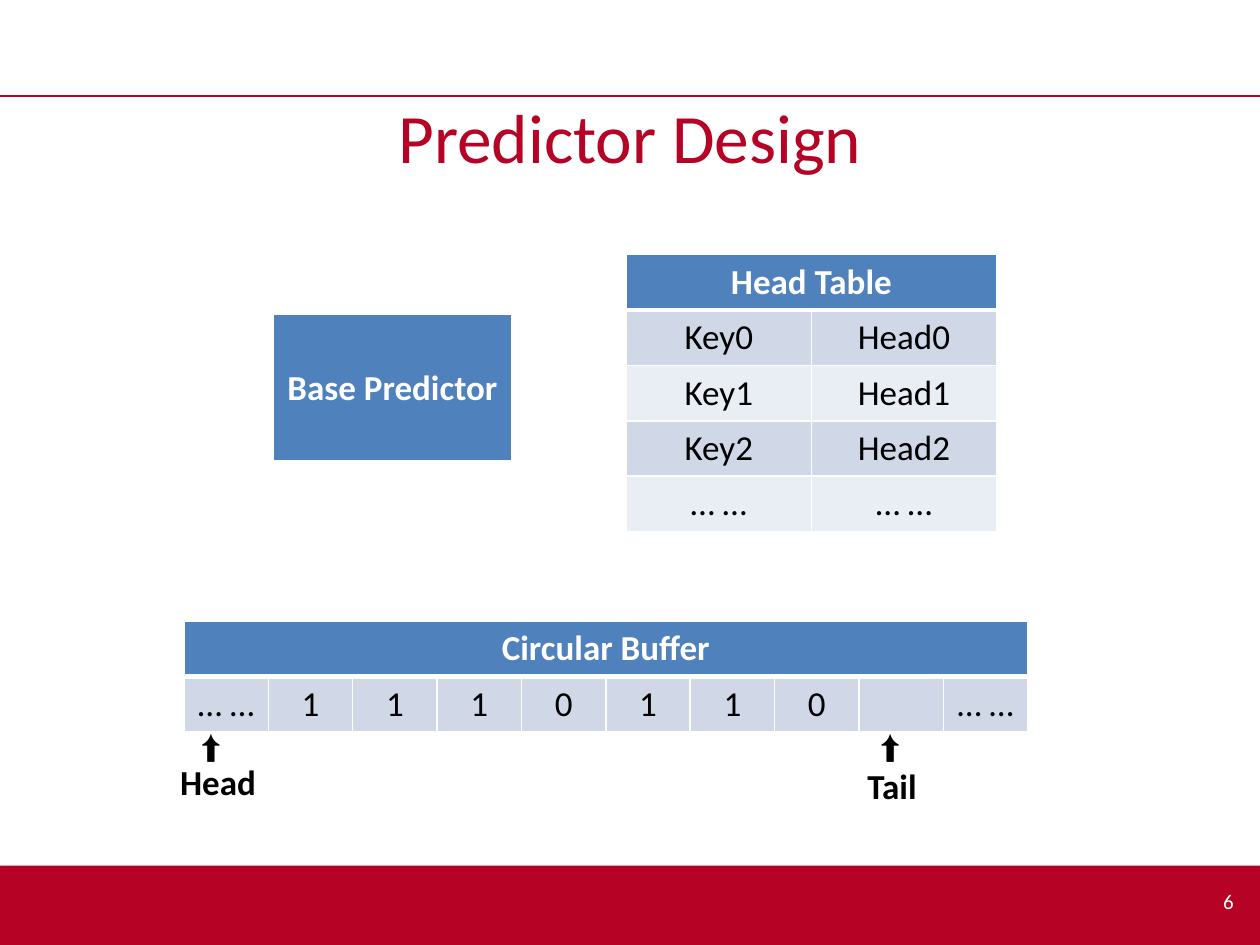
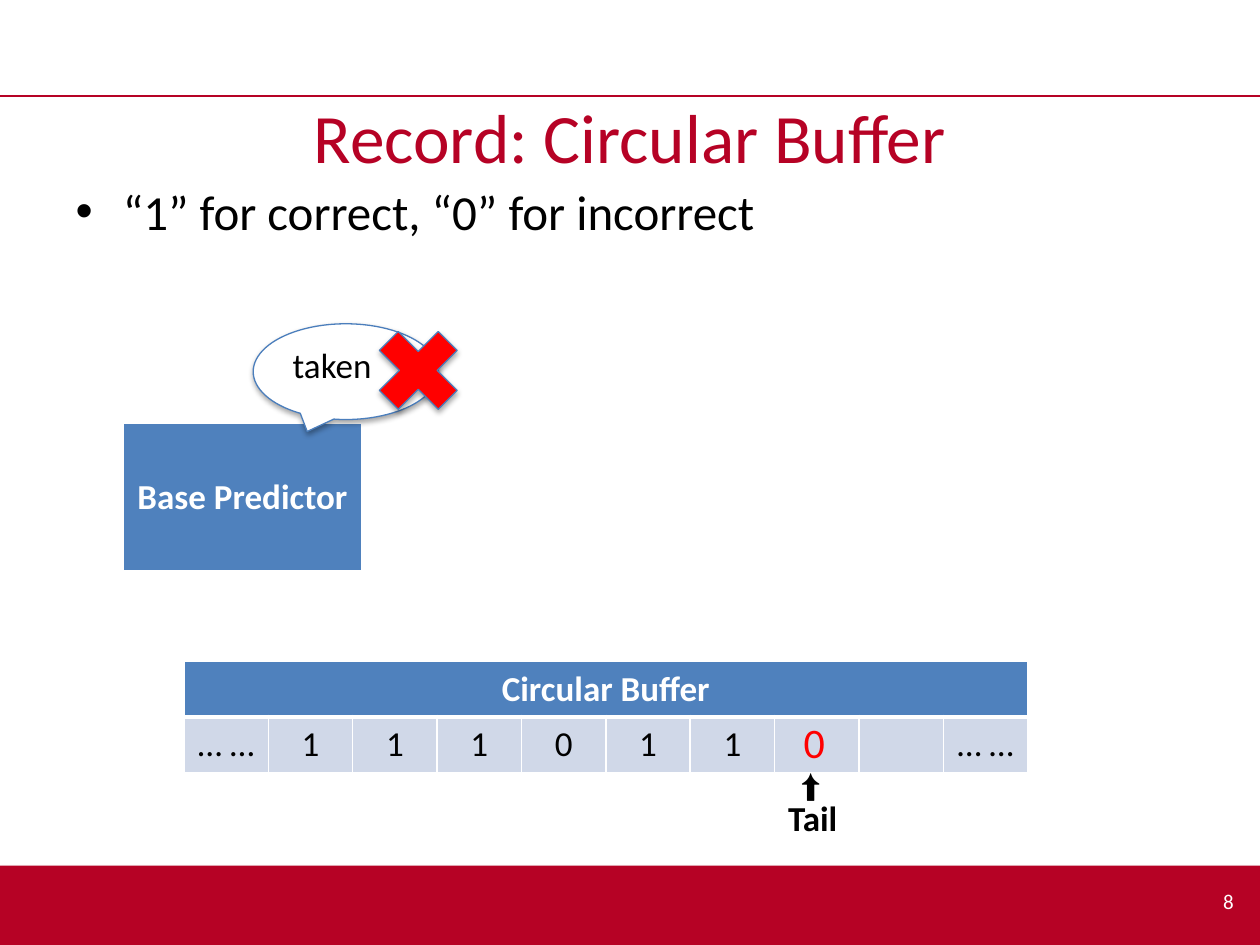
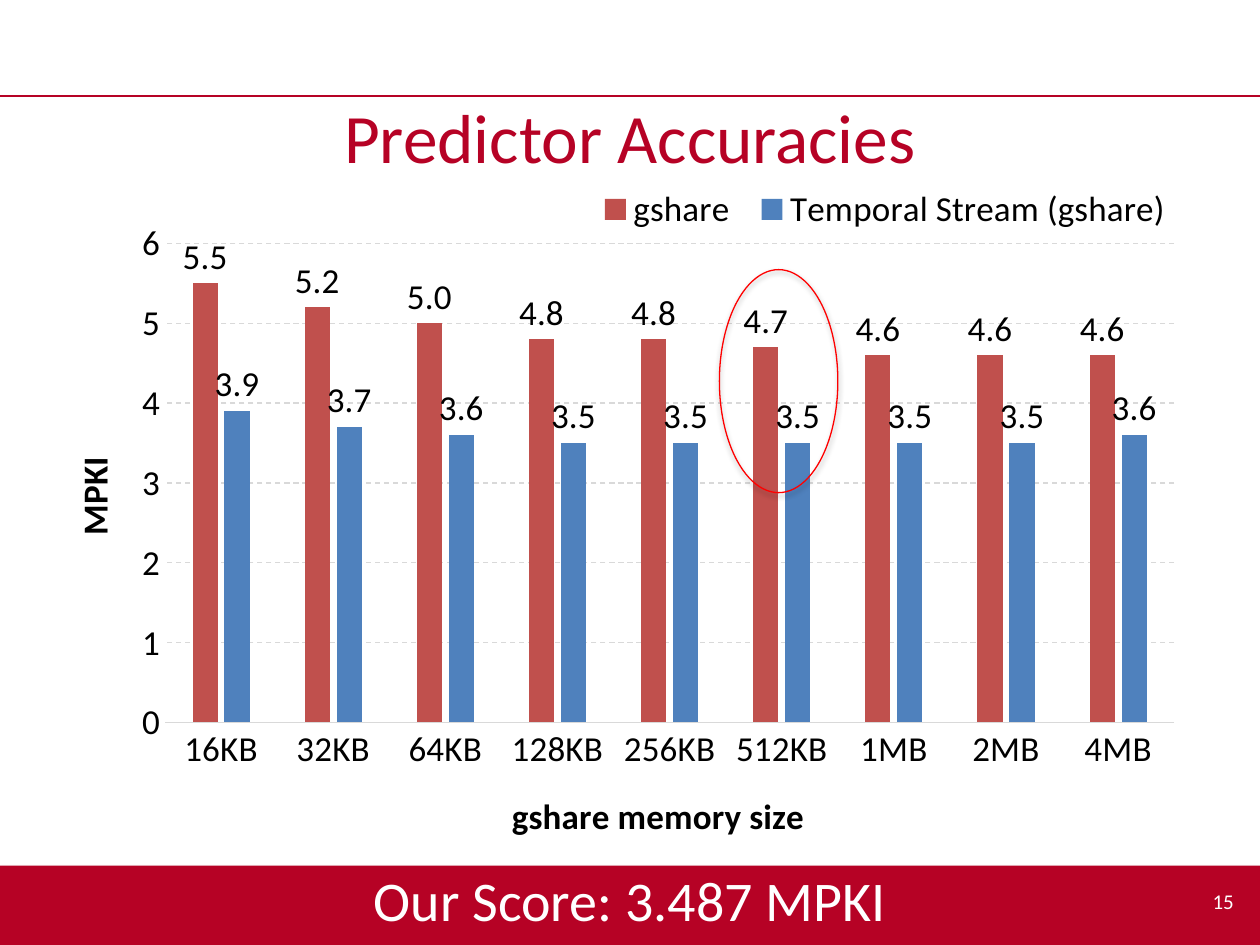
from lxml.etree import SubElement
from pptx import Presentation
from pptx.chart.data import CategoryChartData
from pptx.dml.color import RGBColor
from pptx.enum.chart import XL_CHART_TYPE, XL_LABEL_POSITION, XL_LEGEND_POSITION, XL_TICK_MARK
from pptx.enum.dml import MSO_LINE
from pptx.enum.shapes import MSO_CONNECTOR, MSO_SHAPE
from pptx.enum.text import MSO_ANCHOR, MSO_AUTO_SIZE, PP_ALIGN
from pptx.oxml.ns import qn
from pptx.util import Inches, Pt

CRIMSON = RGBColor(0xB6, 0x02, 0x25)
WHITE = RGBColor(0xFF, 0xFF, 0xFF)
BLACK = RGBColor(0, 0, 0)
RED = RGBColor(0xFF, 0, 0)
BLUE = RGBColor(0x4F, 0x81, 0xBD)
EDGE = RGBColor(0x4B, 0x7E, 0xBC)
BRICK = RGBColor(0xC0, 0x50, 0x4D)
GREY = RGBColor(0xD9, 0xD9, 0xD9)
BANDS = RGBColor(0xD0, 0xD8, 0xE8), RGBColor(0xE9, 0xED, 0xF4)

PLAIN = dict(name="Calibri", size=Pt(20), bold=False)
BOLD = {**PLAIN, "bold": True}
TITLE = {**PLAIN, "size": Pt(39.6)}
LIST = {**PLAIN, "size": Pt(28)}
SCORE = {**PLAIN, "size": Pt(32)}
DIGIT = {**PLAIN, "size": Pt(24)}
NUMBER = {**PLAIN, "size": Pt(12)}
ARROW = {**PLAIN, "name": "Arial", "size": Pt(18)}
PLACE = "left", "top", "width", "height"
CELL = 0.67
ROW = 0.44
BODY = 0.5, 1.39, 9, 5.43


def apply(thing, values):
    """Set every value on the thing."""
    for name, value in values.items():
        setattr(thing, name, value)


def inch(box):
    """Turn a box of numbers into lengths."""
    return [Inches(n) for n in box]


def write(frame, text, style, color, align=PP_ALIGN.CENTER):
    """Put one styled line into a text frame."""
    para = frame.paragraphs[0]
    para.alignment = align
    run = para.add_run()
    run.text = text
    apply(run.font, style)
    run.font.color.rgb = color


def label(slide, box, text, style, color=BLACK, align=PP_ALIGN.CENTER,
          wrap=True, anchor=MSO_ANCHOR.TOP):
    """Add a text box."""
    frame = slide.shapes.add_textbox(*inch(box)).text_frame
    apply(frame, dict(word_wrap=wrap, vertical_anchor=anchor))
    write(frame, text, style, color, align)


def shade(shape):
    """Give a shape the soft shadow of the theme."""
    shape.shadow.inherit = False
    effects = shape.element.spPr.find(qn("a:effectLst"))
    outer = SubElement(effects, qn("a:outerShdw"), blurRad="40000", dist="23000",
                       dir="5400000", rotWithShape="0")
    tint = SubElement(outer, qn("a:srgbClr"), val="000000")
    SubElement(tint, qn("a:alpha"), val="35000")


def draw(slide, kind, box, fill=None, line=None):
    """Add a shadowed preset shape."""
    shape = slide.shapes.add_shape(kind, *inch(box))
    shade(shape)
    if fill is None:
        shape.fill.background()
    else:
        shape.fill.solid()
        shape.fill.fore_color.rgb = fill
    if line is None:
        shape.line.fill.background()
    else:
        shape.line.color.rgb = line
        shape.line.width = Pt(0.75)
    return shape


def brand(deck, slide):
    """Put the rule and the bottom band on the master."""
    band = draw(slide, MSO_SHAPE.RECTANGLE, (0, 6.87, 10, 0.63), CRIMSON)
    rule = slide.shapes.add_connector(MSO_CONNECTOR.STRAIGHT, *inch((0, 0.76, 10, 0.76)))
    rule.line.color.rgb = CRIMSON
    rule.line.width = Pt(1)
    SubElement(rule.element.spPr, qn("a:effectLst"))
    tree = deck.slide_master.shapes.element
    for index, part in enumerate((band, rule)):
        part.element.xpath(".//p:cNvPr")[0].set("id", str(100 + index))
        tree.insert(2 + index, part.element)


def start(deck, layout, title, number):
    """Add a slide with its title and number."""
    slide = deck.slides.add_slide(deck.slide_layouts[layout])
    head = slide.shapes.title
    apply(head, dict(zip(PLACE, inch((0, 0.76, 10, 0.63)))))
    apply(head.text_frame, dict(auto_size=MSO_AUTO_SIZE.NONE, word_wrap=True,
                                vertical_anchor=MSO_ANCHOR.MIDDLE))
    write(head.text_frame, title, TITLE, CRIMSON)
    label(slide, (7.17, 6.95, 2.72, 0.4), number, NUMBER, WHITE,
          PP_ALIGN.RIGHT, anchor=MSO_ANCHOR.MIDDLE)
    return slide


def edge(cell, base):
    """Draw white borders, with the given width below."""
    props = cell._tc.get_or_add_tcPr()
    for index, (side, width) in enumerate(zip("LRTB", (1, 1, 1, base))):
        line = props.makeelement(qn("a:ln" + side), {"w": str(Pt(width))})
        fill = SubElement(line, qn("a:solidFill"))
        SubElement(fill, qn("a:srgbClr"), val=str(WHITE))
        props.insert(index, line)


def grid(slide, left, top, wide, high, head, rows=()):
    """Add a table with one heading over banded rows."""
    cols = len(rows[0]) if rows else 1
    count = len(rows) + 1
    box = inch((left, top, wide * cols, high * count))
    table = slide.shapes.add_table(count, cols, *box).table
    for col in table.columns:
        col.width = Inches(wide)
    if cols > 1:
        table.cell(0, 0).merge(table.cell(0, cols - 1))
    lines = [[head] + [""] * (cols - 1), *rows]
    for r, line in enumerate(lines):
        table.rows[r].height = Inches(high)
        for c, text in enumerate(line):
            cell = table.cell(r, c)
            cell.vertical_anchor = MSO_ANCHOR.MIDDLE
            cell.fill.solid()
            cell.fill.fore_color.rgb = BANDS[(r - 1) % 2] if r else BLUE
            edge(cell, 1 if r else 3)
            if text:
                write(cell.text_frame, text, PLAIN if r else BOLD, BLACK if r else WHITE)


def base(slide, left, top):
    """Add the base predictor block."""
    grid(slide, left, top, 1.89, 1.18, "Base Predictor")


def ring(slide, top, bits):
    """Add the circular buffer."""
    grid(slide, 1.46, top, CELL, ROW, "Circular Buffer", [["… …", *bits, "… …"]])


def mark(slide, left, top, text, shift, drop):
    """Add an up arrow with a word below it."""
    label(slide, (left, top, 0.43, 0.4), "⬆", ARROW, align=PP_ALIGN.LEFT, wrap=False)
    label(slide, (left + shift, top + drop, 1.02, 0.44), text, BOLD)


def design(slide):
    """Fill the design slide."""
    base(slide, 2.17, 2.49)
    keys = [[f"Key{n}", f"Head{n}"] for n in range(3)]
    grid(slide, 4.97, 2.02, 1.47, ROW, "Head Table", [*keys, ["… …", "… …"]])
    ring(slide, 4.93, [*"1110110", ""])
    mark(slide, 1.5, 5.71, "Head", -0.28, 0.28)
    mark(slide, 6.89, 5.71, "Tail", -0.32, 0.31)


def record(slide):
    """Fill the record slide."""
    body = slide.placeholders[1]
    apply(body, dict(zip(PLACE, inch(BODY))))
    body.text_frame.auto_size = MSO_AUTO_SIZE.NONE
    write(body.text_frame, "“1” for correct, “0” for incorrect", LIST, BLACK, PP_ALIGN.LEFT)
    body.text_frame.paragraphs[0].space_before = Pt(0)
    base(slide, 0.98, 3.36)
    ring(slide, 5.25, [*"111011", "", ""])
    mark(slide, 6.26, 6.02, "Tail", -0.32, 0.25)
    bubble = draw(slide, MSO_SHAPE.OVAL_CALLOUT, (2.01, 2.57, 1.47, 0.76), WHITE, EDGE)
    bubble.text_frame.vertical_anchor = MSO_ANCHOR.TOP
    write(bubble.text_frame, "taken", PLAIN, BLACK, PP_ALIGN.LEFT)
    draw(slide, MSO_SHAPE.MATH_MULTIPLY, (2.87, 2.49, 0.9, 0.9), RED, EDGE)
    label(slide, (6.28, 5.64, 0.37, 0.5), "0", DIGIT, RED, PP_ALIGN.LEFT, False)


def settle(part, index, box, inner=False):
    """Fix the place of a chart part as shares of the chart."""
    for old in part.findall(qn("c:layout")):
        part.remove(old)
    layout = part.makeelement(qn("c:layout"), {})
    part.insert(index, layout)
    manual = SubElement(layout, qn("c:manualLayout"))
    if inner:
        SubElement(manual, qn("c:layoutTarget"), val="inner")
    for name in ("xMode", "yMode"):
        SubElement(manual, qn("c:" + name), val="edge")
    for name, share in zip("xywh", box):
        SubElement(manual, qn("c:" + name), val=str(share))


def bars(slide, box):
    """Add the column chart of accuracies."""
    data = CategoryChartData(number_format="0.0")
    data.categories = ["16KB", "32KB", "64KB", "128KB", "256KB", "512KB", "1MB", "2MB", "4MB"]
    data.add_series("gshare", (5.5, 5.2, 5, 4.8, 4.8, 4.7, 4.6, 4.6, 4.6))
    data.add_series("Temporal Stream (gshare)", (3.9, 3.7, 3.6, 3.5, 3.5, 3.5, 3.5, 3.5, 3.6))
    chart = slide.shapes.add_chart(XL_CHART_TYPE.COLUMN_CLUSTERED, *inch(box), data).chart
    apply(chart, dict(has_title=False, has_legend=True))
    apply(chart.font, PLAIN)
    chart.font.color.rgb = BLACK
    apply(chart.legend, dict(position=XL_LEGEND_POSITION.TOP, include_in_layout=False))
    plot = chart.plots[0]
    apply(plot, dict(gap_width=219, overlap=-27, vary_by_categories=False))
    for series, color in zip(plot.series, (BRICK, BLUE)):
        series.format.fill.solid()
        series.format.fill.fore_color.rgb = color
        apply(series.data_labels, dict(show_value=True, number_format="0.0",
                                       number_format_is_linked=False,
                                       position=XL_LABEL_POSITION.OUTSIDE_END))
    cats, vals = chart.category_axis, chart.value_axis
    for axis, name in ((cats, "gshare memory size"), (vals, "MPKI")):
        apply(axis, dict(major_tick_mark=XL_TICK_MARK.NONE, minor_tick_mark=XL_TICK_MARK.NONE))
        write(axis.axis_title.text_frame, name, BOLD, BLACK)
    apply(vals, dict(minimum_scale=0, maximum_scale=6, major_unit=1, has_major_gridlines=True))
    apply(vals.tick_labels, dict(number_format="0", number_format_is_linked=False))
    vals.format.line.fill.background()
    lines = vals.major_gridlines.format.line
    for line in (cats.format.line, lines):
        line.color.rgb = GREY
        line.width = Pt(0.75)
    lines.dash_style = MSO_LINE.DASH
    root = chart.element.find(qn("c:chart"))
    settle(root.find(qn("c:plotArea")), 0, (0.09, 0.1, 0.89, 0.7), True)
    settle(root.find(qn("c:legend")), 1, (0.46, 0.01, 0.53, 0.08))


def scores(slide):
    """Fill the accuracy slide."""
    label(slide, (0, 6.82, 10, 0.63), "Our Score: 3.487 MPKI", SCORE, WHITE)
    bars(slide, BODY)
    draw(slide, MSO_SHAPE.OVAL, (5.71, 2.14, 0.94, 1.77), line=RED)


def main():
    """Build and save the deck."""
    deck = Presentation()
    apply(deck, dict(slide_width=Inches(10), slide_height=Inches(7.5)))
    pages = ((5, "Predictor Design", "6", design),
             (1, "Record: Circular Buffer", "8", record),
             (5, "Predictor Accuracies", "15", scores))
    for layout, title, number, fill in pages:
        fill(start(deck, layout, title, number))
    brand(deck, deck.slides[0])
    deck.save("out.pptx")


if __name__ == "__main__":
    main()
